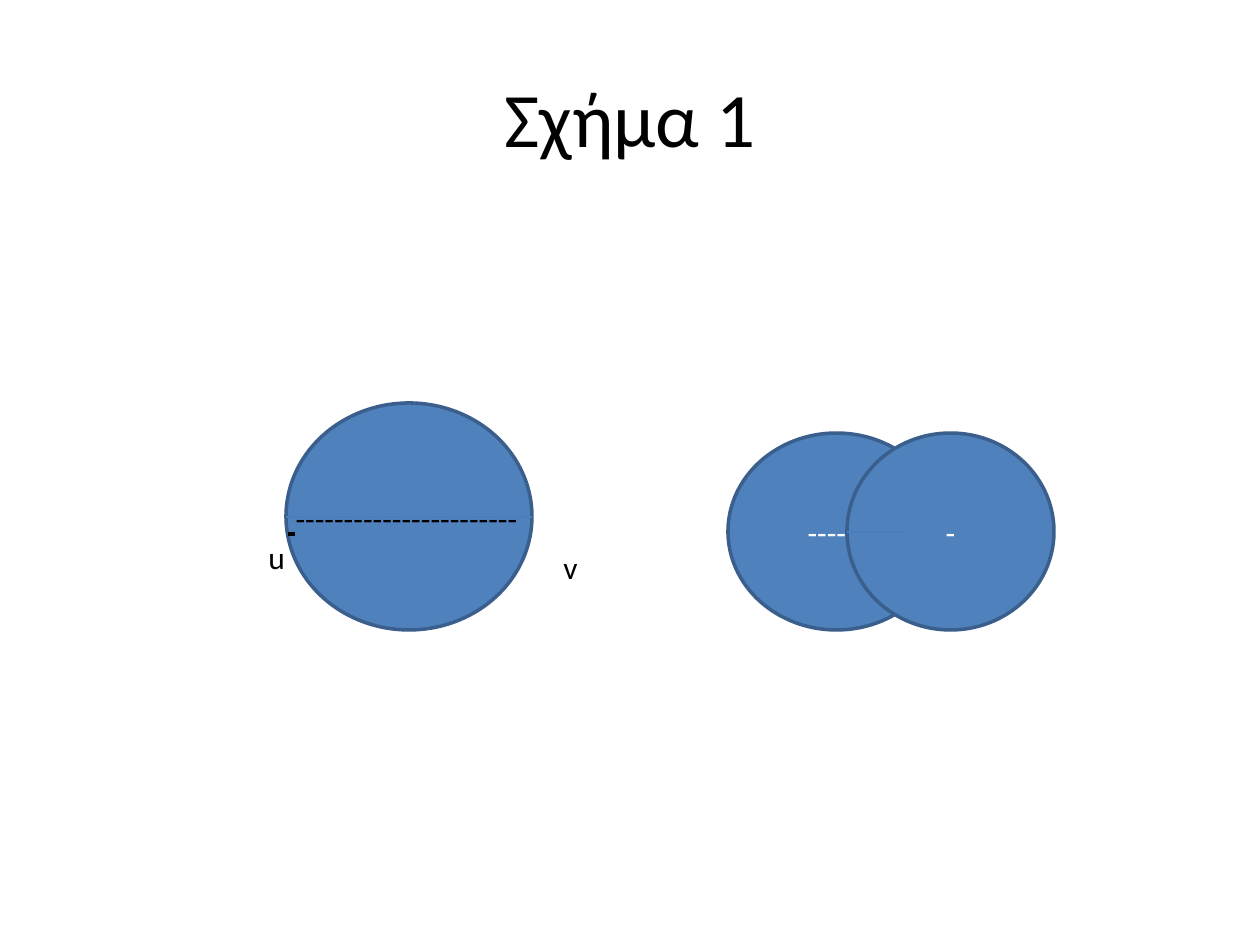
from pptx import Presentation, util as u
from pptx.dml.color import RGBColor
from pptx.enum import shapes, text
from pptx.oxml.ns import qn
from lxml import etree

PX = 914400 / 126
THEME = {
    "font": "Calibri", "title": 44, "body": 18,
    "ink": "000000", "light": "FFFFFF",
    "fill": "4F81BD", "outline": "3A5F8C", "rule": "4B7EBC",
}


def emu(*lengths):
    return [u.Emu(round(n * PX)) for n in lengths]


def write(sp, runs, size="body", color="ink", align=None, **frame):
    """Put (words, underlined) runs in one paragraph; frame holds text frame settings."""
    tf = sp.text_frame
    for name, value in frame.items():
        setattr(tf, name, value)
    p = tf.paragraphs[0]
    p.alignment = align
    for words, underlined in runs:
        r = p.add_run()
        r.text = words
        r.font.color.rgb = RGBColor.from_string(THEME[color])
        look = {"name": THEME["font"], "size": u.Pt(THEME[size]), "underline": underlined}
        for name, value in look.items():
            setattr(r.font, name, value)


prs = Presentation()
prs.slide_width, prs.slide_height = emu(1260, 945)
s = prs.slides.add_slide(prs.slide_layouts[6])
CENTER, MIDDLE = text.PP_ALIGN.CENTER, text.MSO_ANCHOR.MIDDLE
GROW = text.MSO_AUTO_SIZE.SHAPE_TO_FIT_TEXT

title = s.shapes.add_textbox(*emu(63, 38, 1134, 157))
write(title, [("Σχήμα 1", False)], "title", align=CENTER, word_wrap=True, vertical_anchor=MIDDLE)

# Circles: box and centred dashes
circles = [
    ((286, 403, 246, 227), ""),
    ((728, 433, 217, 197), "-" * 6),
    ((847, 433, 207, 197), "-"),
]
for box, dashes in circles:
    sp = s.shapes.add_shape(shapes.MSO_SHAPE.OVAL, *emu(*box))
    sp.shadow.inherit = False
    sp.fill.solid()
    sp.fill.fore_color.rgb = RGBColor.from_string(THEME["fill"])
    sp.line.color.rgb = RGBColor.from_string(THEME["outline"])
    sp.line.width = u.Pt(2)
    if dashes:
        write(sp, [(dashes, False)], color="light", align=CENTER, vertical_anchor=MIDDLE)

# Diameter of the single circle, and the overlap of the pair
for x1, x2, y in [(286, 532, 517), (847, 906, 532)]:
    line = s.shapes.add_connector(shapes.MSO_CONNECTOR.STRAIGHT, *emu(x1, y, x2, y))
    line.line.color.rgb = RGBColor.from_string(THEME["rule"])
    line.line.width = u.Pt(0.75)
    etree.SubElement(line._element.spPr, qn("a:effectLst"))

# Labels: box, runs, wrapping
labels = [
    ((256, 532, 43, 50), [("u", False)], False),
    ((551, 542, 40, 50), [("v", False)], False),
    ((276, 493, 256, 50), [(" ", True), ("-" * 23, False)], True),
]
for box, runs, wraps in labels:
    label = s.shapes.add_textbox(*emu(*box))
    write(label, runs, word_wrap=wraps, auto_size=GROW)

prs.save("out.pptx")
